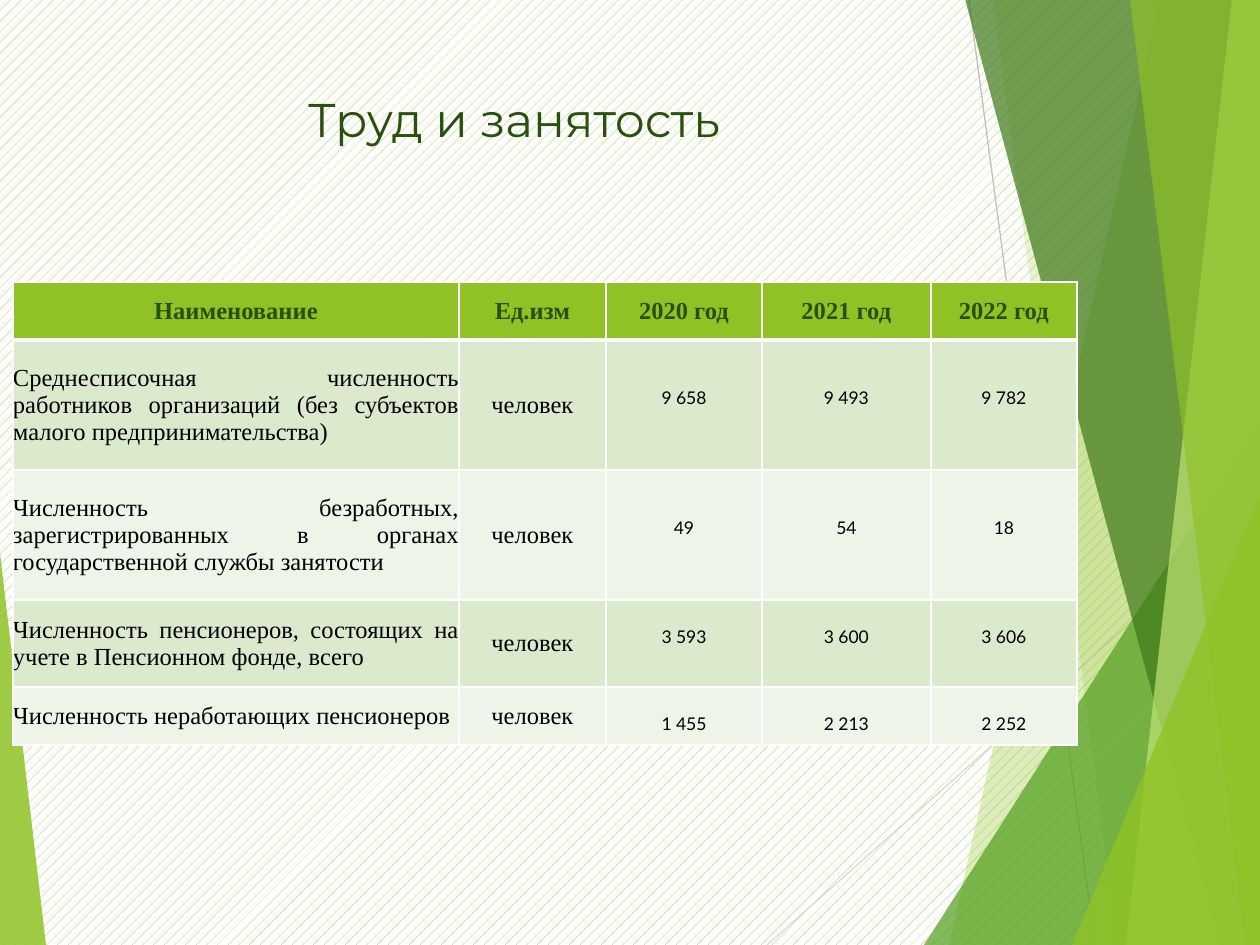
from dataclasses import dataclass

from lxml import etree
from pptx import Presentation
from pptx.dml.color import RGBColor
from pptx.enum.dml import MSO_PATTERN
from pptx.enum.shapes import MSO_CONNECTOR, MSO_SHAPE
from pptx.enum.text import MSO_ANCHOR, PP_ALIGN
from pptx.oxml.ns import qn
from pptx.util import Pt

LEFT, MID, JUST = PP_ALIGN.LEFT, PP_ALIGN.CENTER, PP_ALIGN.JUSTIFY
TOP, HALF = MSO_ANCHOR.TOP, MSO_ANCHOR.MIDDLE
TRI, LINE = MSO_SHAPE.ISOSCELES_TRIANGLE, MSO_CONNECTOR.STRAIGHT
DOTS = MSO_PATTERN.PERCENT_20
SCALE = 914400 // 126


@dataclass(frozen=True)
class Theme:
    lime: str = "90C226"
    leaf: str = "54A021"
    moss: str = "3F7819"
    pale: str = "C0E474"
    dark: str = "2A5010"
    ink: str = "000000"
    white: str = "FFFFFF"
    gray: str = "BFBFBF"
    mist: str = "D9D9D9"
    bands: tuple = ("DBE9CD", "EEF4E8")
    head: str = "Montserrat"
    serif: str = "Times New Roman"
    sans: str = "Lato"
    big: int = 27
    body: int = 14
    small: int = 10


def px(n):
    return int(n * SCALE)


def rgb(code):
    return RGBColor.from_string(code)


def write(frame, text, font, size, color, bold=False, align=LEFT):
    par = frame.paragraphs[0]
    par.alignment = align
    run = par.add_run()
    run.text = text
    run.font.name = font
    run.font.size = Pt(size)
    run.font.bold = bold
    run.font.color.rgb = rgb(color)


class Page:
    def __init__(self, deck, theme):
        self.theme = theme
        self.slide = deck.slides.add_slide(deck.slide_layouts[6])
        self.shapes = self.slide.shapes

    def back(self):
        fill = self.slide.background.fill
        fill.patterned()
        fill.pattern = DOTS
        fill.fore_color.rgb = rgb(self.theme.lime)
        fill.back_color.rgb = rgb(self.theme.white)

    def line(self, x1, y1, x2, y2, color):
        rule = self.shapes.add_connector(LINE, px(x1), px(y1), px(x2), px(y2))
        rule.line.color.rgb = rgb(color)
        rule.line.width = Pt(0.75)
        etree.SubElement(rule.element.spPr, qn("a:effectLst"))

    def paint(self, shape, color, alpha):
        shape.shadow.inherit = False
        shape.line.fill.background()
        shape.fill.solid()
        shape.fill.fore_color.rgb = rgb(color)
        tone = shape.element.spPr.find(qn("a:solidFill"))[0]
        etree.SubElement(tone, qn("a:alpha"), val=str(alpha * 1000))

    def shard(self, top, base, color, alpha):
        pen = self.shapes.build_freeform(top, -1, scale=SCALE)
        pen.add_line_segments([(1260, -1), (1260, 945), (base, 945)], close=True)
        self.paint(pen.convert_to_shape(), color, alpha)

    def wedge(self, x, y, w, h, tip, color, alpha):
        shape = self.shapes.add_shape(TRI, px(x), px(y), px(w), px(h))
        shape.adjustments[0] = tip
        self.paint(shape, color, alpha)

    def title(self, text, x, y, w, h):
        frame = self.shapes.add_textbox(px(x), px(y), px(w), px(h)).text_frame
        frame.word_wrap = True
        frame.vertical_anchor = TOP
        look = self.theme
        write(frame, text, look.head, look.big, look.dark, align=MID)

    def cell(self, cell, text, fill, pad, anchor, base=1, **look):
        side, top, foot = pad
        cell.margin_left = cell.margin_right = px(side)
        cell.margin_top, cell.margin_bottom = px(top), px(foot)
        cell.vertical_anchor = anchor
        cell.fill.solid()
        cell.fill.fore_color.rgb = rgb(fill)
        props = cell._tc.get_or_add_tcPr()
        for i, (tag, wide) in enumerate(zip("LRTB", (1, 1, 1, base))):
            edge = etree.Element(qn("a:ln" + tag), w=str(Pt(wide)))
            tone = etree.SubElement(edge, qn("a:solidFill"))
            etree.SubElement(tone, qn("a:srgbClr"), val=self.theme.white)
            props.insert(i, edge)
        write(cell.text_frame, text, **look)

    def table(self, x, y, cols, rows, head, data, drops):
        look = self.theme
        grid = self.shapes.add_table(
            len(rows), len(cols), px(x), px(y), px(sum(cols)), px(sum(rows))
        ).table
        for col, wide in zip(grid.columns, cols):
            col.width = px(wide)
        for row, high in zip(grid.rows, rows):
            row.height = px(high)
        flat = (0, 0, 0)
        for c, text in enumerate(head):
            self.cell(grid.cell(0, c), text, look.lime, flat, HALF, base=3,
                      font=look.serif, size=look.body, color=look.dark,
                      bold=True, align=MID)
        for r, (row, drop) in enumerate(zip(data, drops), 1):
            fill = look.bands[(r - 1) % 2]
            for c, text in enumerate(row):
                if c < 2:
                    pad, anchor = flat, HALF
                    font, size = look.serif, look.body
                else:
                    pad, anchor = (9, drop, 5), TOP
                    font, size = look.sans, look.small
                self.cell(grid.cell(r, c), text, fill, pad, anchor,
                          font=font, size=size, color=look.ink,
                          align=MID if c else JUST)


theme = Theme()
deck = Presentation()
deck.slide_width, deck.slide_height = px(1260), px(945)
page = Page(deck, theme)
page.back()
page.line(969, 0, 1095, 945, theme.gray)
page.line(1260, 508, 767, 945, theme.mist)
page.shard(1160, 949, theme.lime, 30)
page.shard(993, 1118, theme.lime, 20)
page.wedge(924, 420, 336, 525, 1, theme.leaf, 72)
for shard in (
    (965, 1220, theme.moss, 70),
    (1232, 1126, theme.pale, 70),
    (1130, 1245, theme.lime, 65),
):
    page.shard(*shard)
page.wedge(1072, 495, 188, 450, 1, theme.lime, 80)
page.wedge(0, 553, 46, 392, 0, theme.lime, 85)
page.title("Труд и занятость", 70, 84, 888, 181)

unit = "человек"
page.table(
    13, 282,
    cols=(446, 147, 156, 169, 146),
    rows=(58, 130, 130, 87, 58),
    head=("Наименование", "Ед.изм", "2020 год", "2021 год", "2022 год"),
    data=(
        ("Среднесписочная численность работников организаций "
         "(без субъектов малого предпринимательства)",
         unit, "9 658", "9 493", "9 782"),
        ("Численность безработных, зарегистрированных в органах "
         "государственной службы занятости", unit, "49", "54", "18"),
        ("Численность пенсионеров, состоящих на учете в Пенсионном фонде, всего",
         unit, "3 593", "3 600", "3 606"),
        ("Численность неработающих пенсионеров",
         unit, "1 455", "2 213", "2 252"),
    ),
    drops=(47, 47, 26, 26),
)
deck.save("out.pptx")
